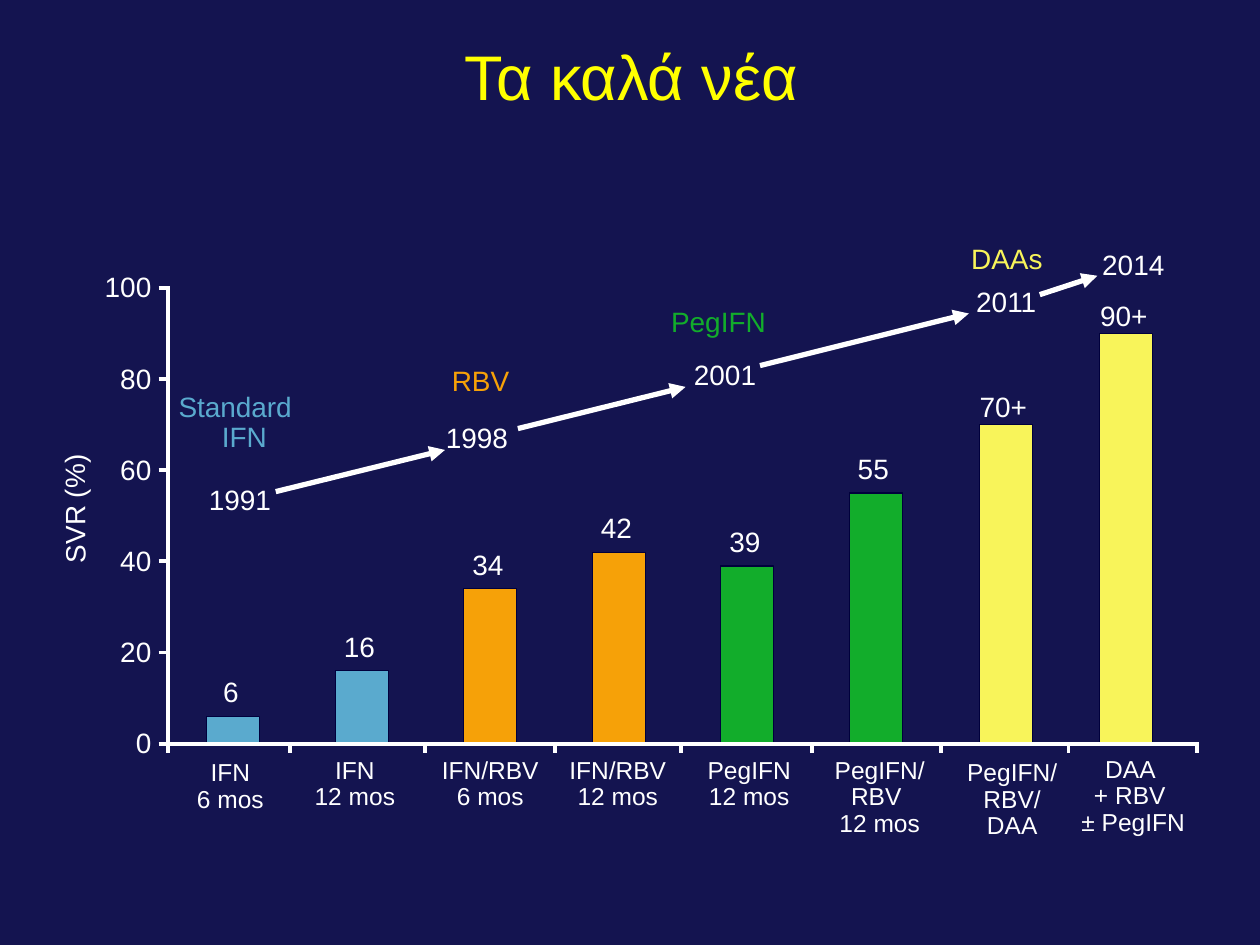
import pptx
import pptx.util
import pptx.dml.color
import pptx.enum.shapes
import pptx.enum.text
from lxml import etree
from pptx.util import Cm, Pt
from pptx.dml.color import RGBColor

NAVY = RGBColor(0x14, 0x14, 0x50)
EDGE = RGBColor(0x00, 0x00, 0x3C)
WHITE = RGBColor(0xFF, 0xFF, 0xFF)
GOLD = RGBColor(0xFF, 0xFF, 0x00)
BLUE = RGBColor(0x5A, 0xAA, 0xCE)
AMBER = RGBColor(0xF6, 0xA1, 0x08)
GREEN = RGBColor(0x12, 0xAD, 0x2B)
LEMON = RGBColor(0xF8, 0xF4, 0x5A)

ALIGN = pptx.enum.text.PP_ALIGN
FONT = "Arial"

# Content: value, shown value, colour, bar left, name, name centre, name top
BARS = [
    (6, "6", BLUE, 4.17, "IFN\n6 mos", 4.65, 15.21),
    (16, "16", BLUE, 6.76, "IFN\n12 mos", 7.16, 15.16),
    (34, "34", AMBER, 9.35, "IFN/RBV\n6 mos", 9.89, 15.16),
    (42, "42", AMBER, 11.94, "IFN/RBV\n12 mos", 12.46, 15.16),
    (39, "39", GREEN, 14.53, "PegIFN\n12 mos", 15.11, 15.16),
    (55, "55", GREEN, 17.12, "PegIFN/ RBV \v12 mos", 17.74, 15.16),
    (70, "70+", LEMON, 19.74, "PegIFN/\nRBV/\nDAA", 20.41, 15.21),
    (90, "90+", LEMON, 22.17, "DAA \v+ RBV \v± PegIFN", 22.85, 15.14),
]

# Text, colour, left, top, width
NOTES = [
    ("1991", WHITE, 3.96, 9.68, 1.78),
    ("1998", WHITE, 8.74, 8.43, 1.78),
    ("2001", WHITE, 13.74, 7.16, 1.78),
    ("2011", WHITE, 19.43, 5.69, 1.73),
    ("2014", WHITE, 21.97, 4.95, 1.78),
    ("RBV", AMBER, 8.86, 7.29, 1.75),
    ("PegIFN", GREEN, 13.28, 6.10, 2.46),
    ("DAAs", LEMON, 19.33, 4.83, 2.0),
]

# Start and end of each arrow
ARROWS = [
    (5.56, 9.91, 8.97, 9.07),
    (10.44, 8.64, 13.82, 7.80),
    (15.32, 7.37, 19.53, 6.32),
    (20.96, 5.94, 22.12, 5.56),
]

# Plot measures
AXIS, BASE, END = 3.38, 14.99, 24.13
UNIT = 0.0918  # height of one percent
BAR = 1.07
TICK = 0.18
EDGES = [AXIS, 5.84, 8.56, 11.18, 13.72, 16.36, 18.97, 21.54, END]

deck = pptx.Presentation()
deck.slide_width, deck.slide_height = Cm(25.4), Cm(19.05)
slide = deck.slides.add_slide(deck.slide_layouts[5])
slide.background.fill.solid()
slide.background.fill.fore_color.rgb = NAVY


def style(frame, size, color, align, space=0.9):
    for para in frame.paragraphs:
        para.alignment = align
        para.line_spacing = space
        for run in para.runs:
            run.font.name = FONT
            run.font.size = Pt(size)
            run.font.color.rgb = color


def inset(frame):
    frame.margin_left = frame.margin_right = 0
    frame.margin_top = frame.margin_bottom = 0


def label(text, x, y, w, h, size=16, color=WHITE, align=ALIGN.CENTER,
          wrap=True, tight=False):
    box = slide.shapes.add_textbox(Cm(x), Cm(y), Cm(w), Cm(h))
    frame = box.text_frame
    frame.word_wrap = wrap
    if tight:
        inset(frame)
    frame.text = text
    style(frame, size, color, align)
    return box


def line(x1, y1, x2, y2, width=2.25, arrow=False):
    kind = pptx.enum.shapes.MSO_CONNECTOR.STRAIGHT
    link = slide.shapes.add_connector(kind, Cm(x1), Cm(y1), Cm(x2), Cm(y2))
    link.line.color.rgb = WHITE
    link.line.width = Pt(width)
    if arrow:
        tip = etree.SubElement(link.line._get_or_add_ln(),
                               pptx.oxml.ns.qn("a:tailEnd"))
        tip.set("type", "triangle")
    etree.SubElement(link._element.spPr, pptx.oxml.ns.qn("a:effectLst"))


# Title
title = slide.shapes.title
title.left, title.top = Cm(0.66), Cm(0.64)
title.width, title.height = Cm(24.13), Cm(1.98)
title.text_frame.text = "Τα καλά νέα"
title.text_frame.vertical_anchor = pptx.enum.text.MSO_ANCHOR.MIDDLE
title.text_frame.auto_size = pptx.enum.text.MSO_AUTO_SIZE.NONE
inset(title.text_frame)
style(title.text_frame, 36, GOLD, ALIGN.CENTER, 0.85)

# Bars with values and names
for value, shown, color, left, name, mid, top in BARS:
    high = value * UNIT
    bar = slide.shapes.add_shape(pptx.enum.shapes.MSO_SHAPE.RECTANGLE,
                                 Cm(left), Cm(BASE - high), Cm(BAR), Cm(high))
    bar.shadow.inherit = False
    bar.fill.solid()
    bar.fill.fore_color.rgb = color
    bar.line.color.rgb = EDGE
    bar.line.width = Pt(0.75)
    gap = 0.64 if shown.endswith("+") else 0.76
    label(shown, left - 0.05, BASE - high - gap, BAR, 0.62,
          wrap=False, tight=True)
    rows = 1 + name.count("\n") + name.count("\v") + name.count("/ ")
    label(name, mid - 1.54, top, 3.07, 0.25 + 0.54 * rows, 14)

# Axes, scale and ticks
line(AXIS, BASE, AXIS, 5.77)
line(AXIS - 0.03, BASE, END + 0.05, BASE)
for mark in range(0, 101, 20):
    y = BASE - mark * UNIT
    line(AXIS - TICK, y, AXIS, y)
    label(str(mark), 2.05, y - 0.29, 1, 0.62, align=ALIGN.RIGHT, tight=True)
for x in EDGES:
    line(x, BASE, x, BASE + TICK)
label("SVR (%)", -0.74, 9.83, 4.55, 0.86).rotation = 269.6

# Treatment milestones
for text, color, x, y, w in NOTES:
    label(text, x, y, w, 0.88, color=color, align=ALIGN.LEFT, wrap=False)
first = label("Standard\nIFN", 3.35, 7.8, 3.15, 1.5, color=BLUE)
first.text_frame.paragraphs[0].alignment = ALIGN.LEFT
for ends in ARROWS:
    line(*ends, width=3, arrow=True)

deck.save("out.pptx")
